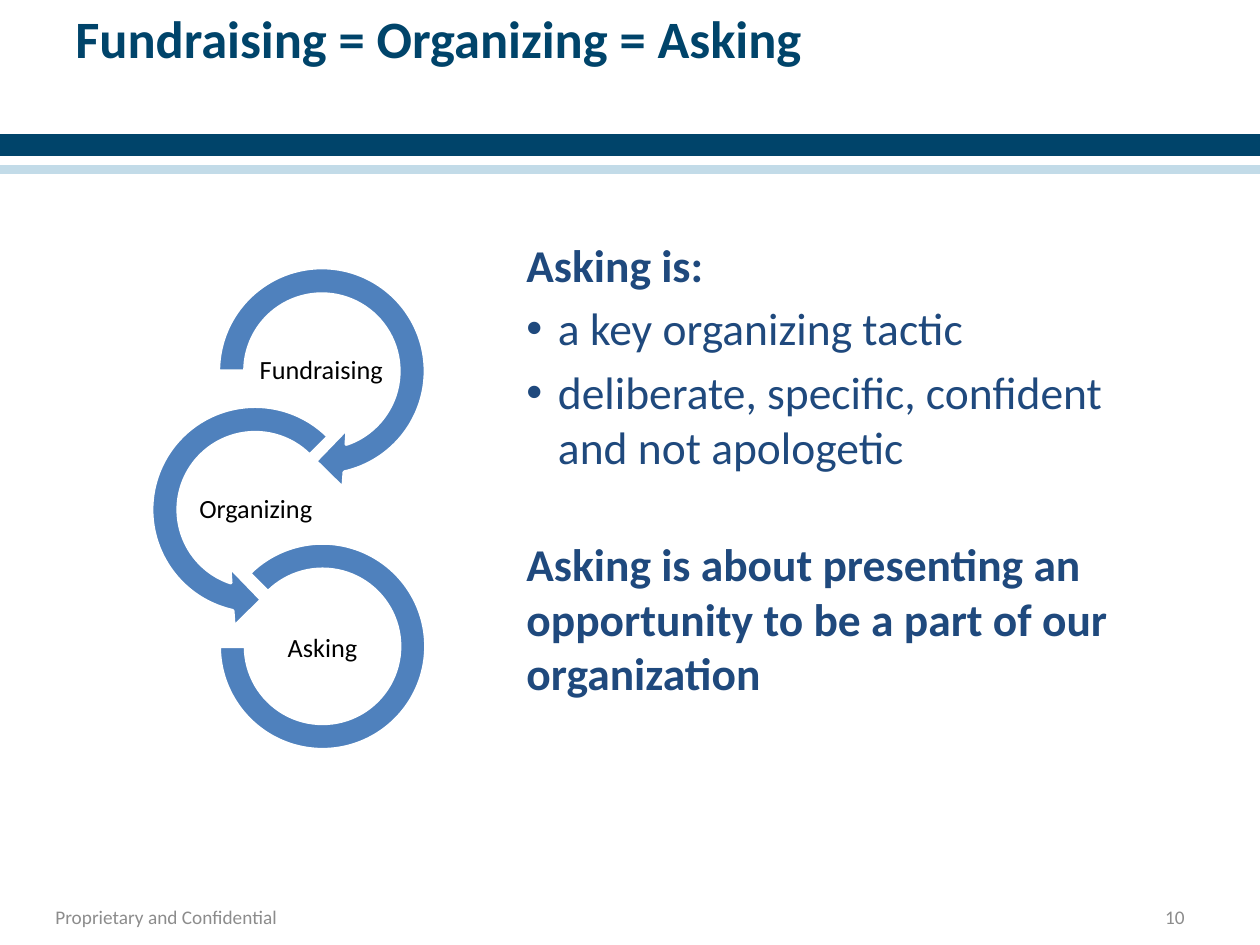
from lxml.etree import SubElement
from pptx import Presentation
from pptx.dml.color import RGBColor
from pptx.enum.shapes import MSO_SHAPE
from pptx.enum.text import MSO_ANCHOR, PP_ALIGN
from pptx.oxml.ns import qn
from pptx.util import Inches, Pt

FONT = "Calibri"
COLORS = {
    "navy": "00446A",
    "white": "FFFFFF",
    "pale": "C2DBE8",
    "gray": "8C8C8C",
    "body": "1F497D",
    "arrow": "4F81BD",
    "black": "000000",
}


def color(name):
    return RGBColor.from_string(COLORS[name])


def add_shape(slide, kind, box, fill, line, adjustments=()):
    shape = slide.shapes.add_shape(kind, *map(Inches, box))
    shape.shadow.inherit = False
    shape.fill.solid()
    shape.fill.fore_color.rgb = color(fill)
    shape.line.color.rgb = color(line)
    shape.line.width = Pt(2)
    for index, value in enumerate(adjustments):
        shape.adjustments[index] = value


def add_text_frame(slide, box, anchor=MSO_ANCHOR.TOP, insets=(0.1, 0.05)):
    frame = slide.shapes.add_textbox(*map(Inches, box)).text_frame
    frame.word_wrap = True
    frame.vertical_anchor = anchor
    frame.margin_left = frame.margin_right = Inches(insets[0])
    frame.margin_top = frame.margin_bottom = Inches(insets[1])
    return frame


def add_bullet(paragraph):
    properties = paragraph._p.get_or_add_pPr()
    properties.set("marL", str(Inches(0.25)))
    properties.set("indent", str(-Inches(0.25)))
    SubElement(properties, qn("a:buFont"), typeface="Arial")
    SubElement(properties, qn("a:buChar"), char="•")


def write(paragraph, text, size, tint, bold=False, align=PP_ALIGN.LEFT,
          bullet=False, before=None, spacing=None):
    if bullet:
        add_bullet(paragraph)
    paragraph.alignment = align
    if before is not None:
        paragraph.space_before = Pt(before)
    if spacing is not None:
        paragraph.line_spacing = spacing
    run = paragraph.add_run()
    run.text = text
    run.font.name = FONT
    run.font.size = Pt(size)
    run.font.bold = bold
    run.font.color.rgb = color(tint)


def add_text(slide, text, box, anchor=MSO_ANCHOR.MIDDLE, insets=(0.1, 0.05), **style):
    frame = add_text_frame(slide, box, anchor, insets)
    write(frame.paragraphs[0], text, **style)


def add_header_and_footer(slide):
    for top, height, tint in ((1.08, 0.25, "navy"), (1.25, 0.05, "white"), (1.32, 0.05, "pale")):
        add_shape(slide, MSO_SHAPE.RECTANGLE, (0, top, 10, height), tint, tint)
    add_text(slide, "Fundraising = Organizing = Asking", (0.5, 0, 9, 1.25),
             anchor=MSO_ANCHOR.TOP, size=30, tint="navy", bold=True)
    add_text(slide, "Proprietary and Confidential", (0.33, 7.1, 2.57, 0.35),
             insets=(0.11, 0.06), size=11, tint="gray")
    add_text(slide, "10", (7.17, 7.1, 2.33, 0.35), size=11, tint="gray", align=PP_ALIGN.RIGHT)


def add_body(slide):
    frame = add_text_frame(slide, (4.08, 1.83, 5.25, 4.58))
    lines = (
        ("Asking is:", {"bold": True}),
        ("a key organizing tactic", {"bullet": True, "before": 5.2}),
        ("deliberate, specific, confident and not apologetic", {"bullet": True, "before": 5.2}),
        ("Asking is about presenting an opportunity to be a part of our organization",
         {"bold": True, "before": 36}),
    )
    for index, (text, style) in enumerate(lines):
        paragraph = frame.add_paragraph() if index else frame.paragraphs[0]
        write(paragraph, text, size=26, tint="body", **style)


def add_arrow_chain(slide):
    # Outline, its left, top and size, its adjustments, then the label and its place
    steps = (
        (MSO_SHAPE.CIRCULAR_ARROW, 1.6, 1.99, 1.91, (0.11, 11.42, 45, 108, 0.125),
         "Fundraising", 2.02, 2.68),
        (MSO_SHAPE.LEFT_CIRCULAR_ARROW, 1.07, 3.09, 1.91, (0.11, 11.42, 63, 189, 0.125),
         "Organizing", 1.5, 3.78),
        (MSO_SHAPE.BLOCK_ARC, 1.74, 4.31, 1.64, (135, 108, 0.127),
         "Asking", 2.03, 4.89),
    )
    for kind, left, top, size, adjustments, label, label_left, label_top in steps:
        add_shape(slide, kind, (left, top, size, size), "arrow", "white", adjustments)
        add_text(slide, label, (label_left, label_top, 1.06, 0.53), insets=(0.01, 0.01),
                 size=15, tint="black", align=PP_ALIGN.CENTER, spacing=0.9)


def main():
    presentation = Presentation()
    presentation.slide_width = Inches(10)
    presentation.slide_height = Inches(7.5)
    slide = presentation.slides.add_slide(presentation.slide_layouts[6])
    add_header_and_footer(slide)
    add_body(slide)
    add_arrow_chain(slide)
    presentation.save("out.pptx")


if __name__ == "__main__":
    main()
